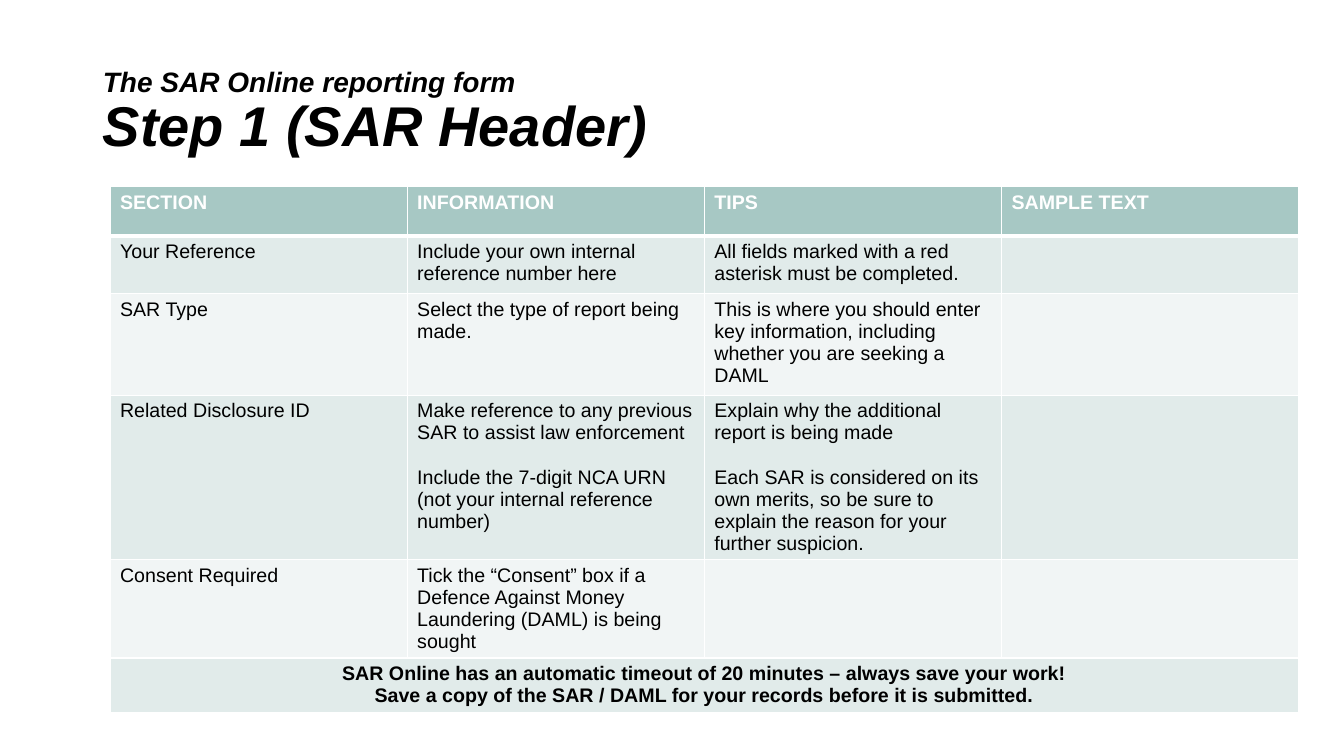
"""Build the SAR Header slide with its guidance table."""
from lxml.etree import SubElement
from pptx import Presentation
from pptx.dml.color import RGBColor
from pptx.enum.text import MSO_ANCHOR, MSO_AUTO_SIZE, PP_ALIGN as Align
from pptx.oxml.ns import qn
from pptx.util import Inches, Pt

COLORS = {"ink": "000000", "paper": "FFFFFF", "header": "A7C8C4",
          "band": "E1EBEA", "light": "F1F5F5"}

HEADINGS = ["SECTION", "INFORMATION", "TIPS", "SAMPLE TEXT"]
GUIDANCE = [
    ["Your Reference",
     "Include your own internal reference number here",
     "All fields marked with a red asterisk must be completed.", ""],
    ["SAR Type",
     "Select the type of report being made.",
     "This is where you should enter key information, including whether "
     "you are seeking a DAML", ""],
    ["Related Disclosure ID",
     "Make reference to any previous SAR to assist law enforcement\n"
     "Include the 7-digit NCA URN (not your internal reference number)",
     "Explain why the additional report is being made\n"
     "Each SAR is considered on its own merits, so be sure to explain the "
     "reason for your further suspicion.", ""],
    ["Consent Required",
     "Tick the “Consent” box if a Defence Against Money Laundering (DAML) "
     "is being sought", "", ""],
]
REMINDER = ("SAR Online has an automatic timeout of 20 minutes – always save your work!\n"
            "Save a copy of the SAR / DAML for your records before it is submitted.")
ROW_SHARES = [6.53, 7.6, 13.47, 21.47, 12.93, 4.67]


class SlideBuilder:
    """Hold the style and current slide; lengths are percentages of its size."""

    font_name = "Arial"
    body_size = 14
    paragraph_gap = 16

    def __init__(self, deck):
        self.width, self.height = deck.slide_width, deck.slide_height
        self.slide = deck.slides.add_slide(deck.slide_layouts[5])

    def across(self, share):
        return round(self.width * share / 100)

    def down(self, share):
        return round(self.height * share / 100)

    def box(self, left, top, width, height):
        return self.across(left), self.down(top), self.across(width), self.down(height)

    def style(self, run, size, color, bold=False, italic=False):
        font = run.font
        font.name, font.size = self.font_name, Pt(size)
        font.bold, font.italic = bold, italic
        font.color.rgb = RGBColor.from_string(COLORS[color])

    def title(self, text, sizes, *place):
        heading = self.slide.shapes.title
        heading.left, heading.top, heading.width, heading.height = self.box(*place)
        frame = heading.text_frame
        frame.text = text
        frame.word_wrap = True
        frame.auto_size = MSO_AUTO_SIZE.NONE
        frame.vertical_anchor = MSO_ANCHOR.MIDDLE
        line = frame.paragraphs[0]
        line.alignment, line.line_spacing = Align.LEFT, 0.9
        for run, size in zip(line.runs, sizes):
            self.style(run, size, "ink", bold=True, italic=True)

    def borders(self, cell, top=1, bottom=1):
        properties = cell._tc.get_or_add_tcPr()
        for side, points in (("L", 1), ("R", 1), ("T", top), ("B", bottom)):
            edge = SubElement(properties, qn(f"a:ln{side}"), w=str(Pt(points)))
            paint = SubElement(edge, qn("a:solidFill"))
            SubElement(paint, qn("a:srgbClr"), val=COLORS["paper"])

    def cell(self, cell, text, fill, color="ink", bold=False, align=Align.LEFT, gap=0):
        cell.fill.solid()
        cell.fill.fore_color.rgb = RGBColor.from_string(COLORS[fill])
        cell.text_frame.text = text
        for index, paragraph in enumerate(cell.text_frame.paragraphs):
            paragraph.alignment = align
            paragraph.font.size = Pt(self.body_size)
            paragraph.space_before = Pt(gap if index else 0)
            for run in paragraph.runs:
                self.style(run, self.body_size, color, bold)

    def table(self, headings, rows, closing, row_shares, left, top, width):
        place = self.box(left, top, width, sum(row_shares))
        grid = self.slide.shapes.add_table(len(row_shares), len(headings), *place).table
        for row, share in zip(grid.rows, row_shares):
            row.height = self.down(share)
        for index, row in enumerate(grid.rows):
            for cell in row.cells:
                self.borders(cell, top=3 if index == 1 else 1, bottom=1 if index else 3)
        for column, heading in enumerate(headings):
            self.cell(grid.cell(0, column), heading, "header", "paper", bold=True)
        for number, entries in enumerate(rows, 1):
            fill = "band" if number % 2 else "light"
            for column, entry in enumerate(entries):
                self.cell(grid.cell(number, column), entry, fill, gap=self.paragraph_gap)
        last = len(row_shares) - 1
        footer = grid.cell(last, 0)
        footer.merge(grid.cell(last, len(headings) - 1))
        self.cell(footer, closing, "band", bold=True, align=Align.CENTER)


def main():
    deck = Presentation()
    deck.slide_width, deck.slide_height = Inches(13.33), Inches(7.5)
    builder = SlideBuilder(deck)
    builder.title("The SAR Online reporting form\vStep 1 (SAR Header)", (20, 40),
                  6.9, 5.33, 89.72, 19.33)
    builder.table(HEADINGS, GUIDANCE, REMINDER, ROW_SHARES, 8.18, 24.67, 88.45)
    deck.save("out.pptx")


if __name__ == "__main__":
    main()
